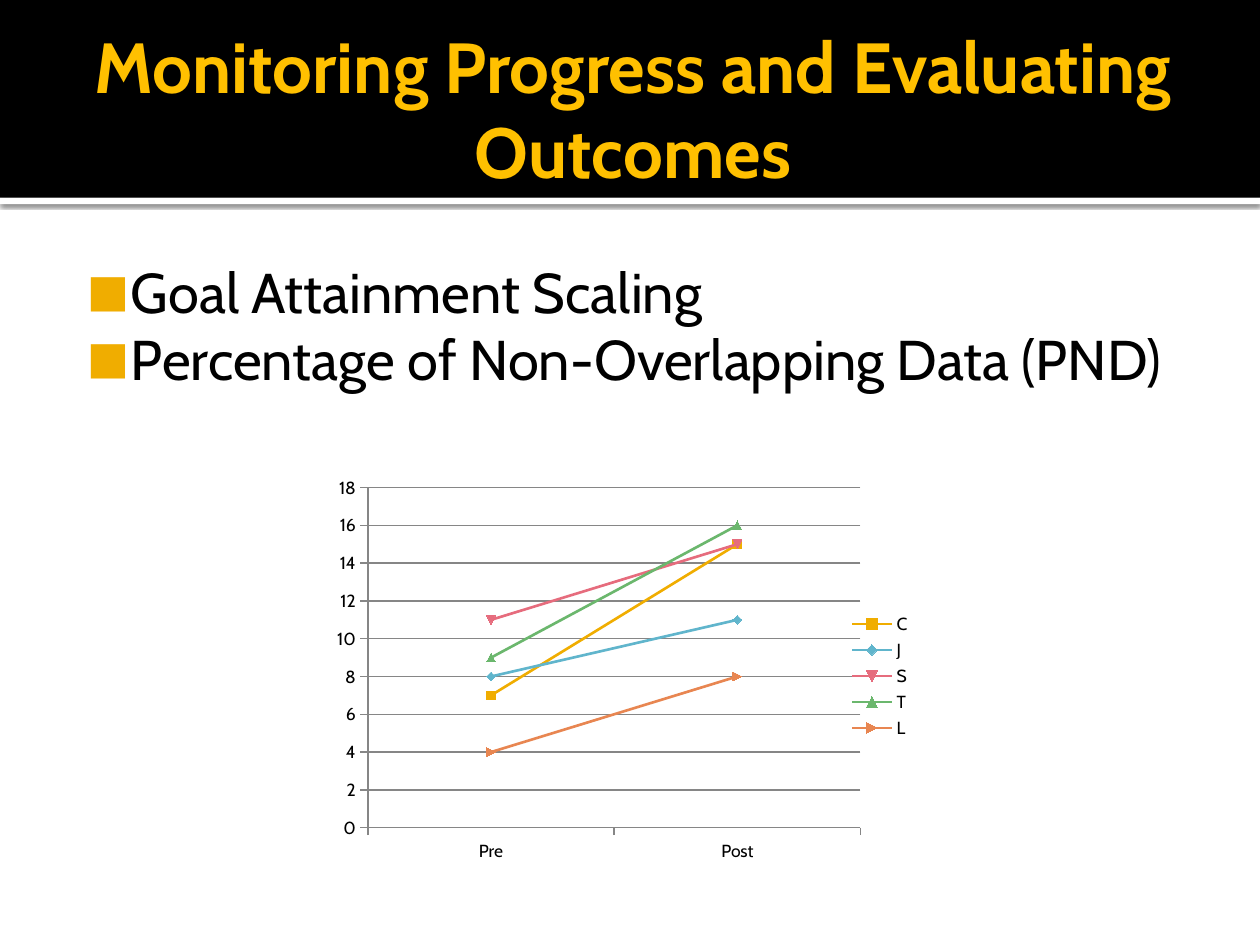
from dataclasses import dataclass

from lxml import etree
from pptx import Presentation
from pptx.chart.data import CategoryChartData
from pptx.dml.color import RGBColor
from pptx.enum.chart import XL_CHART_TYPE, XL_LEGEND_POSITION, XL_TICK_MARK
from pptx.enum.shapes import MSO_SHAPE
from pptx.enum.text import MSO_ANCHOR, MSO_AUTO_SIZE, PP_ALIGN
from pptx.oxml import parse_xml
from pptx.oxml.ns import nsdecls, qn
from pptx.util import Inches, Pt

LINE_CHART = XL_CHART_TYPE.LINE_MARKERS
RIGHT = XL_LEGEND_POSITION.RIGHT
OUTSIDE = XL_TICK_MARK.OUTSIDE
RECT = MSO_SHAPE.RECTANGLE
MIDDLE = MSO_ANCHOR.MIDDLE
FIXED = MSO_AUTO_SIZE.NONE
CENTER = PP_ALIGN.CENTER


@dataclass(frozen=True)
class Theme:
    font: str = "Cabin"
    black: str = "000000"
    white: str = "FFFFFF"
    title: str = "FFC000"
    accent: str = "F0AD00"
    grid: str = "868686"
    lines: tuple = ("F0AD00", "60B5CC", "E66C7D", "6BB76D", "E88651")
    head: float = 40.5
    body: float = 32
    label: float = 10


THEME = Theme()
TITLE = "Monitoring Progress and Evaluating Outcomes"
POINTS = ["Goal Attainment Scaling", "Percentage of Non-Overlapping Data (PND)"]
STAGES = ["Pre", "Post"]
SCORES = {"C": (7, 15), "J": (8, 11), "S": (11, 15), "T": (9, 16), "L": (4, 8)}


def rgb(code):
    return RGBColor.from_string(code)


def style(font, size, color, bold=False):
    font.name = THEME.font
    font.size = Pt(size)
    font.bold = bold
    font.color.rgb = rgb(color)


def inset(frame, *sides):
    (frame.margin_left, frame.margin_top,
     frame.margin_right, frame.margin_bottom) = map(Inches, sides)
    frame.word_wrap = True
    frame.auto_size = FIXED


def add_bar(slide, left, top, width, height, color):
    bar = slide.shapes.add_shape(RECT, left, top, width, height)
    bar.shadow.inherit = False
    bar.fill.solid()
    bar.fill.fore_color.rgb = rgb(color)
    bar.line.fill.background()
    return bar


def add_shade(bar):
    effects = bar._element.spPr.find(qn("a:effectLst"))
    effects.append(parse_xml(
        f'<a:outerShdw {nsdecls("a")} blurRad="{Pt(2.5)}" dist="{Pt(0.8)}" '
        f'dir="5400000" algn="t" rotWithShape="0"><a:srgbClr val="{THEME.black}">'
        '<a:alpha val="60000"/></a:srgbClr></a:outerShdw>'))


def add_header(slide, left, top, width, height):
    strip = add_bar(slide, left, top + height, width, Inches(0.05), THEME.white)
    add_shade(strip)
    add_bar(slide, left, top, width, height, THEME.black)
    title = slide.shapes.title
    slide.shapes._spTree.append(title._element)
    title.left, title.top = left + Inches(0.5), top + Inches(0.17)
    title.width, title.height = width - Inches(1), height - Inches(0.2)
    frame = title.text_frame
    frame.text = TITLE
    inset(frame, 0.1, 0.05, 0.05, 0.05)
    frame.vertical_anchor = MIDDLE
    frame.paragraphs[0].alignment = CENTER
    style(frame.paragraphs[0].runs[0].font, THEME.head, THEME.title, True)


def add_bullet(para):
    props = para._p.get_or_add_pPr()
    props.set("marL", str(Inches(0.48)))
    props.set("indent", str(Inches(-0.35)))
    color = etree.SubElement(props, qn("a:buClr"))
    etree.SubElement(color, qn("a:srgbClr"), val=THEME.accent)
    etree.SubElement(props, qn("a:buSzPct"), val="80000")
    etree.SubElement(props, qn("a:buFont"), typeface=THEME.font)
    etree.SubElement(props, qn("a:buChar"), char="■")


def add_points(slide, left, top, width, height):
    frame = slide.shapes.add_textbox(left, top, width, height).text_frame
    inset(frame, 0.06, 0.1, 0.1, 0.05)
    frame.text = "\n".join(POINTS)
    for para in frame.paragraphs:
        add_bullet(para)
        style(para.runs[0].font, THEME.body, THEME.black)


def set_plot(chart, left, top, width, height):
    area = chart._chartSpace.chart.plotArea
    for old in area.findall(qn("c:layout")):
        area.remove(old)
    layout = etree.Element(qn("c:layout"))
    manual = etree.SubElement(layout, qn("c:manualLayout"))
    parts = {"layoutTarget": "inner", "xMode": "edge", "yMode": "edge",
             "x": left, "y": top, "w": width, "h": height}
    for tag, value in parts.items():
        etree.SubElement(manual, qn(f"c:{tag}"), val=str(value))
    area.insert(0, layout)


def add_scores(slide, left, top, width, height):
    data = CategoryChartData()
    data.categories = STAGES
    for name, values in SCORES.items():
        data.add_series(name, values)
    chart = slide.shapes.add_chart(LINE_CHART, left, top, width, height, data).chart
    chart.has_title = False
    style(chart.font, THEME.label, THEME.black)
    chart.has_legend = True
    chart.legend.position = RIGHT
    chart.legend.include_in_layout = False
    set_plot(chart, 0.118, 0.037, 0.782, 0.836)

    scale = chart.value_axis
    scale.minimum_scale, scale.maximum_scale, scale.major_unit = 0, 18, 2
    scale.has_major_gridlines = True
    for axis in (scale, chart.category_axis):
        axis.major_tick_mark = OUTSIDE
    for part in (scale, chart.category_axis, scale.major_gridlines):
        part.format.line.color.rgb = rgb(THEME.grid)
        part.format.line.width = Pt(0.75)

    plot = chart.plots[0]
    plot.vary_by_categories = False
    for series, color in zip(plot.series, THEME.lines):
        series.smooth = False
        series.format.line.color.rgb = rgb(color)
        series.format.line.width = Pt(1.5)
        mark = series.marker
        mark.size = 5
        mark.format.fill.solid()
        mark.format.fill.fore_color.rgb = rgb(color)
        mark.format.line.color.rgb = rgb(color)


def main():
    deck = Presentation()
    deck.slide_width, deck.slide_height = Inches(10), Inches(7.5)
    slide = deck.slides.add_slide(deck.slide_layouts[5])
    add_header(slide, 0, 0, deck.slide_width, Inches(1.57))
    add_points(slide, Inches(0.5), Inches(1.94), Inches(9), Inches(5.06))
    add_scores(slide, Inches(2.33), Inches(3.75), Inches(5), Inches(3.23))
    deck.save("out.pptx")


if __name__ == "__main__":
    main()
